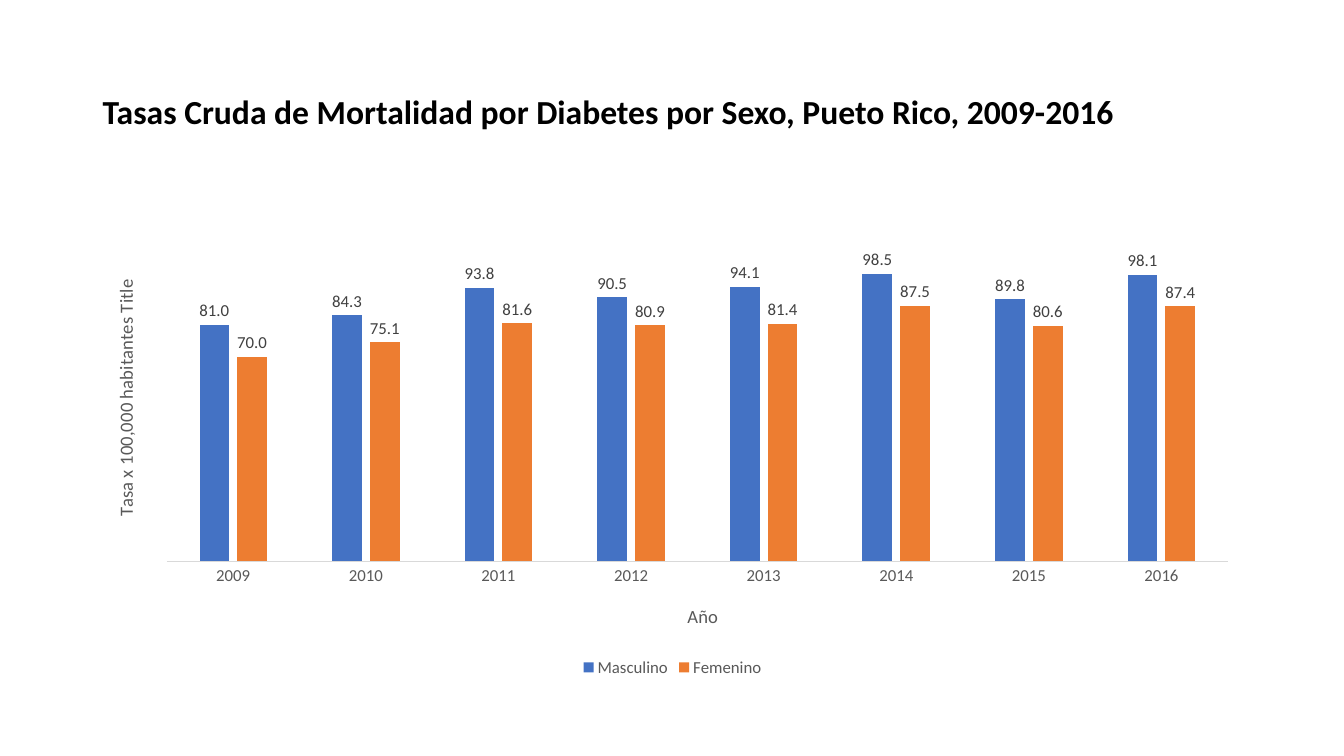
from dataclasses import dataclass

from lxml import etree
from pptx import Presentation
from pptx.chart.data import CategoryChartData
from pptx.dml.color import RGBColor
from pptx.enum.chart import XL_CHART_TYPE, XL_LABEL_POSITION, XL_LEGEND_POSITION, XL_TICK_MARK
from pptx.enum.text import MSO_ANCHOR
from pptx.oxml.ns import qn
from pptx.util import Inches, Pt

CLUSTERED = XL_CHART_TYPE.COLUMN_CLUSTERED
OUTSIDE_END = XL_LABEL_POSITION.OUTSIDE_END
BOTTOM = XL_LEGEND_POSITION.BOTTOM
NO_TICK = XL_TICK_MARK.NONE
MIDDLE = MSO_ANCHOR.MIDDLE

BLACK = RGBColor(0x00, 0x00, 0x00)
DARK_GRAY = RGBColor(0x40, 0x40, 0x40)
GRAY = RGBColor(0x59, 0x59, 0x59)
LIGHT_GRAY = RGBColor(0xD9, 0xD9, 0xD9)
BLUE = RGBColor(0x44, 0x72, 0xC4)
ORANGE = RGBColor(0xED, 0x7D, 0x31)
FONT_NAME = "Calibri"
LEFT, WIDTH = Inches(0.92), Inches(11.5)


@dataclass(frozen=True)
class RateSeries:
    name: str
    rates: tuple[float, ...]
    color: RGBColor


YEARS = [str(year) for year in range(2009, 2017)]
RATE_SERIES = (
    RateSeries("Masculino", (81.0, 84.3, 93.8, 90.5, 94.1, 98.5, 89.8, 98.1), BLUE),
    RateSeries("Femenino", (70.0, 75.1, 81.6, 80.9, 81.4, 87.5, 80.6, 87.4), ORANGE),
)


def format_font(font, size: float, color: RGBColor, bold: bool = False) -> None:
    font.name = FONT_NAME
    font.size = Pt(size)
    font.bold = bold
    font.color.rgb = color


def write_text(text_frame, text: str, *, size: float, color: RGBColor, bold: bool = False) -> None:
    paragraph = text_frame.paragraphs[0]
    run = paragraph.add_run()
    run.text = text
    format_font(run.font, size, color, bold)


def place_manually(layout, **fractions: float) -> None:
    for child in list(layout):
        layout.remove(child)
    manual = etree.SubElement(layout, qn("c:manualLayout"))
    if "w" in fractions:
        etree.SubElement(manual, qn("c:layoutTarget")).set("val", "inner")
    for mode in ("xMode", "yMode"):
        etree.SubElement(manual, qn(f"c:{mode}")).set("val", "edge")
    for name, value in fractions.items():
        etree.SubElement(manual, qn(f"c:{name}")).set("val", str(value))


def child_layout(parent, position: int):
    layout = parent.find(qn("c:layout"))
    if layout is None:
        layout = etree.Element(qn("c:layout"))
        parent.insert(position, layout)
    return layout


def add_title(slide) -> None:
    shape = slide.shapes.add_textbox(LEFT, Inches(0.4), WIDTH, Inches(1.45))
    text_frame = shape.text_frame
    text_frame.word_wrap = True
    text_frame.vertical_anchor = MIDDLE
    text_frame.paragraphs[0].line_spacing = 0.9
    write_text(
        text_frame,
        "Tasas Cruda de Mortalidad por Diabetes por Sexo, Pueto Rico, 2009-2016",
        size=24, color=BLACK, bold=True,
    )


def format_axes(chart) -> None:
    year_axis, rate_axis = chart.category_axis, chart.value_axis
    for axis, title in ((year_axis, "Año"), (rate_axis, "Tasa x 100,000 habitantes Title")):
        write_text(axis.axis_title.text_frame, title, size=13.3, color=GRAY)
        axis.major_tick_mark = NO_TICK
        axis.has_major_gridlines = False
    format_font(year_axis.tick_labels.font, 12, GRAY)
    year_axis.format.line.color.rgb = LIGHT_GRAY
    year_axis.format.line.width = Pt(0.75)
    rate_axis.minimum_scale = 0
    rate_axis.maximum_scale = 120
    rate_axis.tick_labels.number_format = "0.0"
    rate_axis.tick_labels.number_format_is_linked = False
    rate_axis.visible = False
    year_title = year_axis.axis_title._element
    place_manually(child_layout(year_title, 1), x=0.51, y=0.83)


def format_columns(plot) -> None:
    plot.gap_width = 219
    plot.overlap = -27
    plot.vary_by_categories = False
    for series, rate_series in zip(plot.series, RATE_SERIES):
        series.format.fill.solid()
        series.format.fill.fore_color.rgb = rate_series.color
        labels = series.data_labels
        labels.show_value = True
        labels.position = OUTSIDE_END
        labels.number_format = "0.0"
        labels.number_format_is_linked = False
        format_font(labels.font, 12, DARK_GRAY)


def add_rate_chart(slide) -> None:
    data = CategoryChartData(number_format="0.0")
    data.categories = YEARS
    for rate_series in RATE_SERIES:
        data.add_series(rate_series.name, rate_series.rates)
    chart = slide.shapes.add_chart(CLUSTERED, LEFT, Inches(2), WIDTH, Inches(4.76), data).chart
    format_font(chart.font, 10, BLACK)
    chart.has_title = False
    chart.has_legend = True
    chart.legend.position = BOTTOM
    chart.legend.include_in_layout = False
    format_font(chart.legend.font, 12, GRAY)
    format_axes(chart)
    format_columns(chart.plots[0])
    plot_area = chart._chartSpace.chart.plotArea
    place_manually(child_layout(plot_area, 0), x=0.064, y=0.02, w=0.915, h=0.73)


def main() -> None:
    presentation = Presentation()
    presentation.slide_width = Inches(13.33)
    presentation.slide_height = Inches(7.5)
    slide = presentation.slides.add_slide(presentation.slide_layouts[6])
    add_title(slide)
    add_rate_chart(slide)
    presentation.save("out.pptx")


if __name__ == "__main__":
    main()
